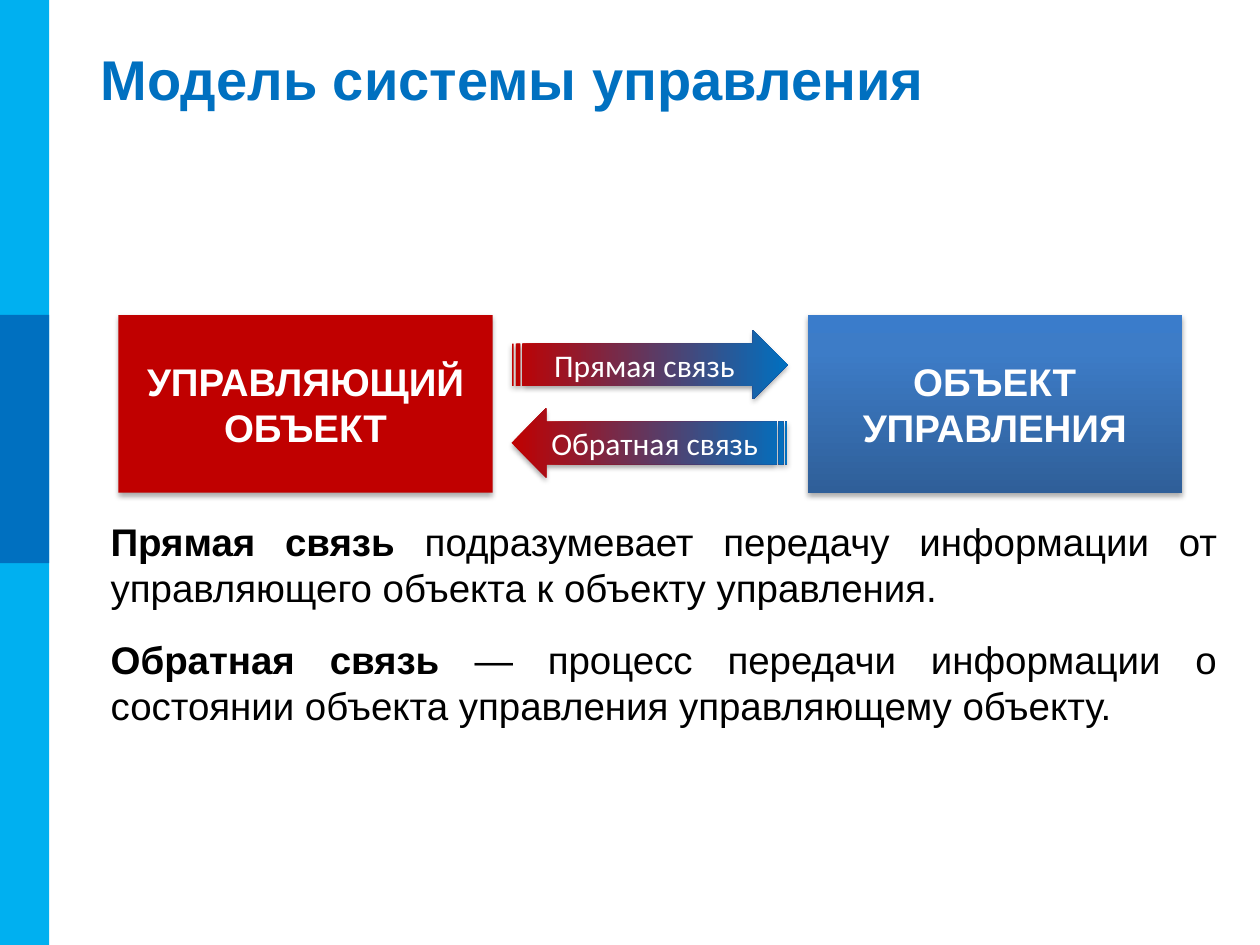
from dataclasses import dataclass
from typing import NamedTuple

from lxml.etree import SubElement
from pptx import Presentation
from pptx.dml.color import RGBColor
from pptx.enum.shapes import MSO_SHAPE
from pptx.enum.text import MSO_ANCHOR, PP_ALIGN
from pptx.oxml.ns import qn
from pptx.util import Inches, Pt


@dataclass(frozen=True)
class Theme:
    sky: str = "00B0F0"
    blue: str = "0070C0"
    red: str = "C00000"
    white: str = "FFFFFF"
    black: str = "000000"
    steel: tuple = ((0, "2F5F99"), (80, "3D7CC7"), (100, "3A7CCB"))
    head: int = 32
    body: int = 22
    label: int = 18
    sans: str = "Arial"
    note: str = "Calibri"


class Box(NamedTuple):
    left: float
    top: float
    width: float
    height: float


class Arrow(NamedTuple):
    text: str
    top: float
    flip: bool


class Note(NamedTuple):
    term: str
    rest: str
    top: float


THEME = Theme()
STRIPES = [
    (Box(0, 0, 0.39, 7.5), THEME.sky),
    (Box(0, 2.5, 0.39, 1.97), THEME.blue),
]
BLOCKS = [
    (["УПРАВЛЯЮЩИЙ ОБЪЕКТ"], 0.94, THEME.red),
    (["ОБЪЕКТ", "УПРАВЛЕНИЯ"], 6.41, THEME.steel),
]
ARROWS = [
    Arrow("Прямая связь", 2.62, False),
    Arrow("Обратная связь", 3.24, True),
]
NOTES = [
    Note("Прямая связь", " подразумевает передачу информации от "
         "управляющего объекта к объекту управления.", 4.06),
    Note("Обратная связь", " — процесс передачи информации о состоянии "
         "объекта управления управляющему объекту.", 5),
]


def place(box: Box) -> list:
    return [Inches(side) for side in box]


def write(frame, lines, *, size, color, font=THEME.sans, bold=False,
          align=PP_ALIGN.LEFT, anchor=MSO_ANCHOR.MIDDLE):
    """Fill a frame; each line is a string or a list of (text, bold) runs."""
    frame.word_wrap = True
    frame.vertical_anchor = anchor
    for index, line in enumerate(lines):
        para = frame.add_paragraph() if index else frame.paragraphs[0]
        para.alignment = align
        runs = [(line, bold)] if isinstance(line, str) else line
        for text, heavy in runs:
            run = para.add_run()
            run.text = text
            run.font.name = font
            run.font.size = Pt(size)
            run.font.bold = heavy
            run.font.color.rgb = RGBColor.from_string(color)


def add_color(parent, value: str):
    return SubElement(parent, qn("a:srgbClr"), val=value)


def blend(shape, stops, angle: int):
    """Give the shape a linear gradient that turns and flips with it."""
    shape.fill.background()
    props = shape._element.spPr
    grad = SubElement(props, qn("a:gradFill"), rotWithShape="1")
    items = SubElement(grad, qn("a:gsLst"))
    for pos, color in stops:
        add_color(SubElement(items, qn("a:gs"), pos=str(pos * 1000)), color)
    SubElement(grad, qn("a:lin"), ang=str(angle * 60000), scaled="0")
    props.replace(props.find(qn("a:noFill")), grad)


def shade(shape):
    """Give the shape a soft shadow just below it."""
    shape.shadow.inherit = False
    effects = shape._element.spPr.find(qn("a:effectLst"))
    outer = SubElement(effects, qn("a:outerShdw"), blurRad=str(Pt(3.1)),
                       dist=str(Pt(1.8)), dir="5400000", rotWithShape="0")
    SubElement(add_color(outer, THEME.black), qn("a:alpha"), val="35000")


def add_shape(slide, kind, box: Box, fill, angle: int = 0):
    """Draw a shape without a line; fill is a colour or gradient stops."""
    shape = slide.shapes.add_shape(kind, *place(box))
    shape.line.fill.background()
    shape.shadow.inherit = False
    if isinstance(fill, str):
        shape.fill.solid()
        shape.fill.fore_color.rgb = RGBColor.from_string(fill)
    else:
        blend(shape, fill, angle)
    return shape


def add_block(slide, lines: list, left: float, fill):
    shape = add_shape(slide, MSO_SHAPE.RECTANGLE,
                      Box(left, 2.5, 2.97, 1.41), fill, 270)
    shade(shape)
    write(shape.text_frame, lines, size=THEME.body, color=THEME.white,
          bold=True, align=PP_ALIGN.CENTER)


def add_arrow(slide, arrow: Arrow):
    stops = ((0, THEME.red), (100, THEME.blue))
    shape = add_shape(slide, MSO_SHAPE.STRIPED_RIGHT_ARROW,
                      Box(4.06, arrow.top, 2.19, 0.55), stops,
                      180 if arrow.flip else 0)
    shape.adjustments[0] = 0.61
    shape.adjustments[1] = 0.5
    if arrow.flip:
        shape._element.spPr.xfrm.set("flipH", "1")
    shade(shape)
    frame = shape.text_frame
    frame.margin_left = frame.margin_right = 0
    write(frame, [arrow.text], size=THEME.label, color=THEME.white,
          font=THEME.note, align=PP_ALIGN.CENTER)


def add_note(slide, note: Note):
    frame = slide.shapes.add_textbox(
        *place(Box(0.78, note.top, 8.98, 0.94))).text_frame
    write(frame, [[(note.term, True), (note.rest, False)]],
          size=THEME.body, color=THEME.black, align=PP_ALIGN.JUSTIFY,
          anchor=MSO_ANCHOR.TOP)


def main():
    deck = Presentation()
    deck.slide_width, deck.slide_height = Inches(10), Inches(7.5)
    slide = deck.slides.add_slide(deck.slide_layouts[6])
    for box, color in STRIPES:
        add_shape(slide, MSO_SHAPE.RECTANGLE, box, color)
    title = slide.shapes.add_textbox(*place(Box(0.7, 0.3, 9.02, 0.64)))
    write(title.text_frame, ["Модель системы управления"],
          size=THEME.head, color=THEME.blue, bold=True)
    for lines, left, fill in BLOCKS:
        add_block(slide, lines, left, fill)
    for arrow in ARROWS:
        add_arrow(slide, arrow)
    for note in NOTES:
        add_note(slide, note)
    deck.save("out.pptx")


if __name__ == "__main__":
    main()
